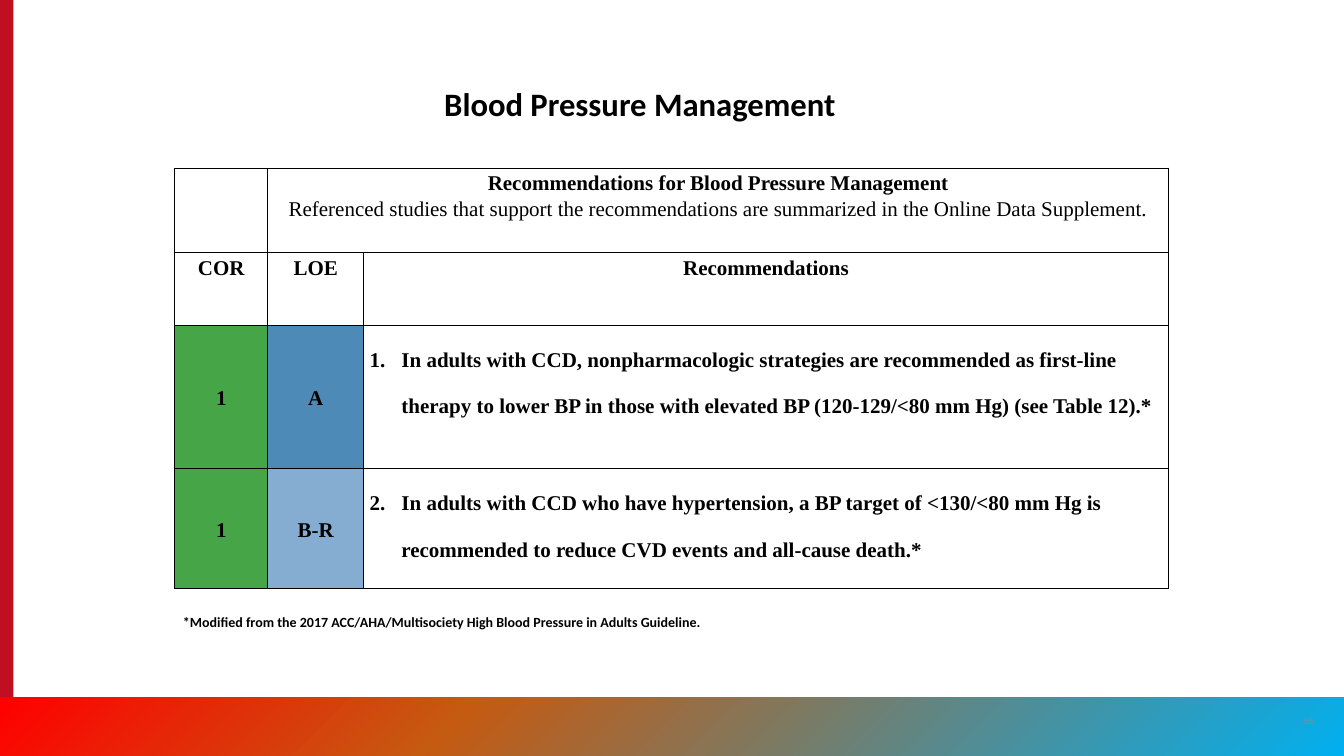
"""Build the blood pressure management recommendations slide."""
from lxml import etree
from pptx import Presentation
from pptx.dml.color import RGBColor
from pptx.enum import shapes, text
from pptx.oxml import parse_xml
from pptx.oxml.ns import nsdecls, qn
from pptx.util import Inches, Pt

BLACK = RGBColor(0x00, 0x00, 0x00)
GREY = RGBColor(0x8A, 0x8B, 0x8A)
CRIMSON = RGBColor(0xC1, 0x0E, 0x21)
RED = RGBColor(0xFF, 0x00, 0x00)
ORANGE = RGBColor(0xC5, 0x5A, 0x11)
SKY = RGBColor(0x00, 0xB0, 0xF0)
GREEN = RGBColor(0x45, 0xA5, 0x47)
BLUE = RGBColor(0x4E, 0x8A, 0xB7)
PALE_BLUE = RGBColor(0x85, 0xAD, 0xD1)

COLUMNS = (1.11, 1.14, 9.58)
ROWS = (1.01, 0.86, 1.71, 1.43)
HEADINGS = ("COR", "LOE", "Recommendations")
RECOMMENDATIONS = (
    ("1", "A", BLUE,
     "In adults with CCD, nonpharmacologic strategies are recommended as "
     "first-line therapy to lower BP in those with elevated BP "
     "(120-129/<80 mm Hg) (see Table 12).*"),
    ("1", "B-R", PALE_BLUE,
     "In adults with CCD who have hypertension, a BP target of <130/<80 mm Hg "
     "is recommended to reduce CVD events and all-cause death.*"),
)


def add_run(paragraph, words, size, font, color=BLACK, bold=True):
    """Add one formatted run to a paragraph."""
    run = paragraph.add_run()
    run.text = words
    run.font.size = Pt(size)
    run.font.name = font
    run.font.bold = bold
    run.font.color.rgb = color


def add_label(slide, box, words, size, color=BLACK, bold=True):
    """Add a one-line text box and return its frame."""
    frame = slide.shapes.add_textbox(*map(Inches, box)).text_frame
    frame.word_wrap = True
    add_run(frame.paragraphs[0], words, size, "Calibri", color, bold)
    return frame


def add_band(slide, box, color):
    """Add a plain rectangle without outline and return it."""
    band = slide.shapes.add_shape(shapes.MSO_SHAPE.RECTANGLE, *map(Inches, box))
    band.shadow.inherit = False
    band.fill.solid()
    band.fill.fore_color.rgb = color
    band.line.fill.background()
    return band


def set_gradient(band, stops, angle):
    """Replace the solid fill of a band by a linear gradient."""
    marks = "".join(
        f'<a:gs pos="{place * 1000}"><a:srgbClr val="{color}"/></a:gs>'
        for place, color in stops)
    gradient = parse_xml(
        f'<a:gradFill {nsdecls("a")} rotWithShape="1"><a:gsLst>{marks}</a:gsLst>'
        f'<a:lin ang="{angle * 60000}" scaled="0"/></a:gradFill>')
    properties = band.element.spPr
    properties.replace(properties.find(qn("a:solidFill")), gradient)


def style_cell(cell, color=None):
    """Give a cell its borders, margins and fill."""
    properties = cell._tc.get_or_add_tcPr()
    for side in "LRTB":
        properties.append(parse_xml(
            f'<a:ln{side} {nsdecls("a")} w="12700"><a:solidFill>'
            f'<a:srgbClr val="{BLACK}"/></a:solidFill></a:ln{side}>'))
    cell.margin_left = cell.margin_right = Inches(0.07)
    cell.margin_top = cell.margin_bottom = 0
    if color is None:
        cell.fill.background()
    else:
        cell.fill.solid()
        cell.fill.fore_color.rgb = color
        cell.vertical_anchor = text.MSO_ANCHOR.MIDDLE


def write_centred(paragraph, words, bold=True):
    """Write a centred table paragraph."""
    paragraph.alignment = text.PP_ALIGN.CENTER
    paragraph.line_spacing = 1.15
    add_run(paragraph, words, 18, "Times New Roman", bold=bold)


def write_numbered(paragraph, number, words):
    """Write an automatically numbered table paragraph."""
    properties = paragraph._p.get_or_add_pPr()
    indent = Inches(0.38)
    properties.set("marL", str(indent))
    properties.set("indent", str(-indent))
    etree.SubElement(properties, qn("a:buAutoNum"),
                     type="arabicPeriod", startAt=str(number))
    paragraph.line_spacing = 2.0
    add_run(paragraph, words, 18, "Times New Roman")


def add_recommendations(slide):
    """Add the table of recommendations."""
    table = slide.shapes.add_table(
        len(ROWS), len(COLUMNS), Inches(2.08), Inches(2),
        Inches(sum(COLUMNS)), Inches(sum(ROWS))).table
    table.first_row = table.horz_banding = False
    for column, width in zip(table.columns, COLUMNS):
        column.width = Inches(width)
    for row, height in zip(table.rows, ROWS):
        row.height = Inches(height)

    fills = {}
    for index, (_, _, loe_color, _) in enumerate(RECOMMENDATIONS, 2):
        fills[index, 0] = GREEN
        fills[index, 1] = loe_color
    for row in range(len(ROWS)):
        for column in range(len(COLUMNS)):
            style_cell(table.cell(row, column), fills.get((row, column)))

    heading = table.cell(0, 1)
    heading.merge(table.cell(0, 2))
    write_centred(heading.text_frame.paragraphs[0],
                  "Recommendations for Blood Pressure Management")
    write_centred(heading.text_frame.add_paragraph(),
                  "Referenced studies that support the recommendations are "
                  "summarized in the Online Data Supplement.", bold=False)
    for column, words in enumerate(HEADINGS):
        write_centred(table.cell(1, column).text_frame.paragraphs[0], words)
    for number, (cor, loe, _, advice) in enumerate(RECOMMENDATIONS, 1):
        cells = [table.cell(number + 1, column).text_frame.paragraphs[0]
                 for column in range(len(COLUMNS))]
        write_centred(cells[0], cor)
        write_centred(cells[1], loe)
        write_numbered(cells[2], number, advice)


def main():
    """Build and save the slide."""
    deck = Presentation()
    deck.slide_width, deck.slide_height = Inches(16), Inches(9)
    slide = deck.slides.add_slide(deck.slide_layouts[6])

    add_band(slide, (0, 0, 0.16, 9), CRIMSON)
    footer = add_band(slide, (0, 8.3, 16, 0.7), RED)
    footer.rotation = 180
    set_gradient(footer, ((0, SKY), (66, ORANGE), (100, RED)), 45)

    page = add_label(slide, (15.34, 8.34, 0.48, 0.48), "66", 8, GREY, False)
    page.vertical_anchor = text.MSO_ANCHOR.MIDDLE
    page.paragraphs[0].alignment = text.PP_ALIGN.CENTER

    title = add_label(slide, (5.19, 1, 5.62, 0.58),
                      "Blood Pressure Management", 28)
    title.paragraphs[0].line_spacing = 0.9
    add_recommendations(slide)
    add_label(slide, (2.08, 7.26, 7.42, 0.3),
              "*Modified from the 2017 ACC/AHA/Multisociety High Blood "
              "Pressure in Adults Guideline.", 12)
    deck.save("out.pptx")


if __name__ == "__main__":
    main()
